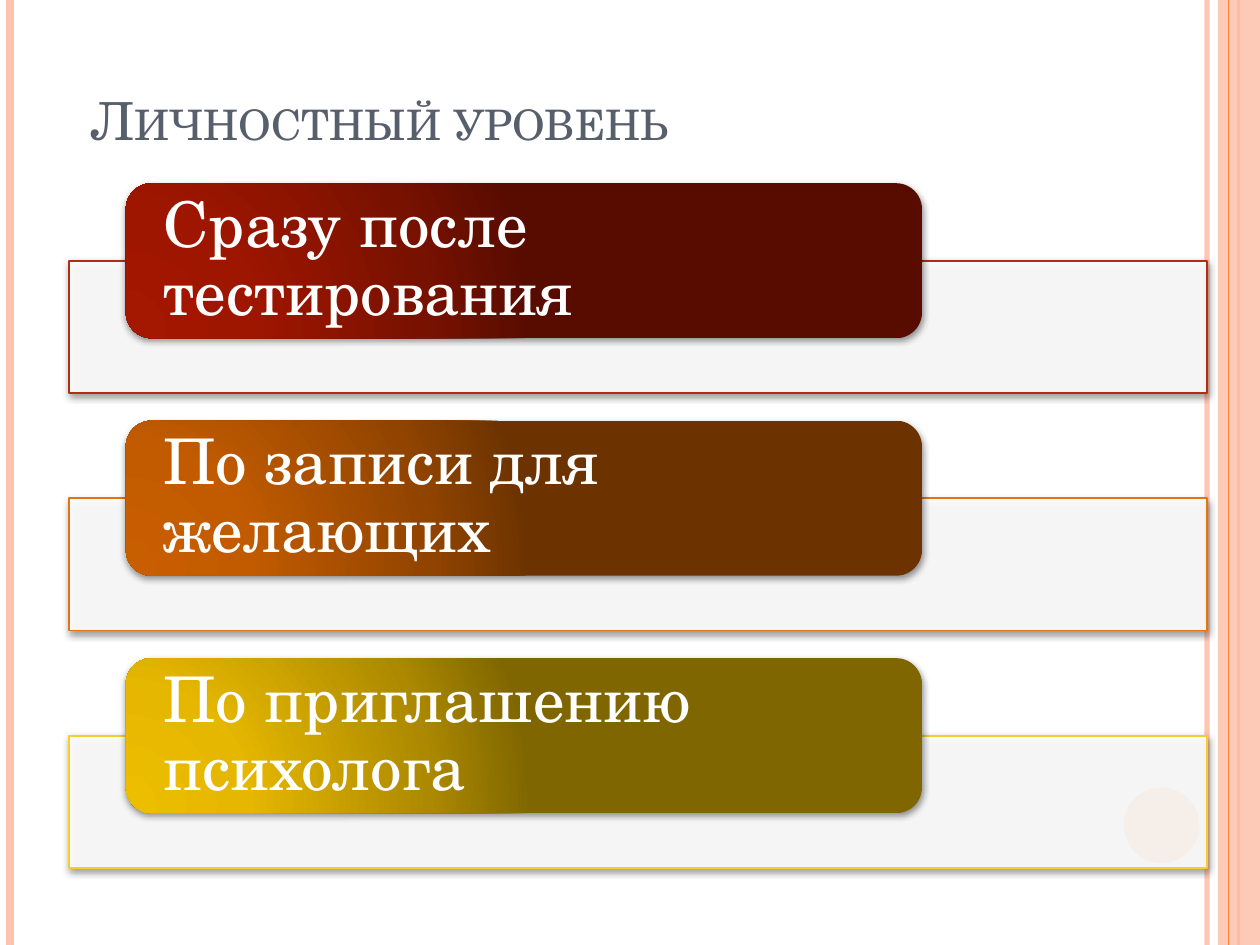
from pptx import Presentation
from pptx.dml.color import RGBColor as Rgb
from pptx.enum.shapes import MSO_CONNECTOR as Link, MSO_SHAPE as Kind
from pptx.enum.text import MSO_ANCHOR as Anchor, PP_ALIGN as Align
from pptx.oxml import parse_xml as to_xml
from pptx.oxml.ns import nsdecls, qn
from pptx.util import Pt

HUES = {"pale": "FEC3AE", "edge": "FE8637", "title": "575F6D", "white": "FFFFFF", "shade": "000000"}
FONT = "TeX Gyre Schola"
WIDE, HIGH = 720, 540
STEP = 135.7
BARS = [(9.58, "pale", 3, 93), (0.08, "pale", 4.5, 100), (9.83, "edge", 1.5, 100)]
ROWS = [
    ("Сразу после тестирования", "B32C16", ("A41700", "9F1600", "771100", "580C00")),
    ("По записи для желающих", "E27513", ("C95E00", "C25B00", "914400", "6C3300")),
    ("По приглашению психолога", "F5CD2D", ("EDBE00", "E5B700", "AC8900", "7F6600")),
]


def node(body):
    tag, _, rest = body.partition(" ")
    return to_xml(f"{tag} {nsdecls('a')} {rest}")


def write(frame, text, size, hue, anchor, inset=(7.2, 3.6), gap=1.0, small=False):
    frame.word_wrap = True
    frame.vertical_anchor = anchor
    frame.margin_left = frame.margin_right = Pt(inset[0])
    frame.margin_top = frame.margin_bottom = Pt(inset[1])
    para = frame.paragraphs[0]
    para.alignment = Align.LEFT
    para.line_spacing = gap
    run = para.add_run()
    run.text = text
    run.font.name, run.font.size = FONT, Pt(size)
    run.font.color.rgb = Rgb.from_string(hue)
    if small:
        run.font._element.set("cap", "small")


class Page:
    """Draw styled elements on one slide."""

    def __init__(self, deck):
        self.slide = deck.slides.add_slide(deck.slide_layouts[6])

    def fade(self, item, alpha):
        if alpha < 100:
            color = next(item._element.spPr.iter(qn("a:srgbClr")))
            color.append(node(f'<a:alpha val="{alpha * 1000}"/>'))

    def bar(self, x, hue, width, alpha=100):
        line = self.slide.shapes.add_connector(Link.STRAIGHT, Pt(x), 0, Pt(x), Pt(HIGH))
        line.line.color.rgb = Rgb.from_string(hue)
        line.line.width = Pt(width)
        self.fade(line, alpha)
        line._element.spPr.append(node("<a:effectLst />"))

    def shape(self, kind, box, hue=None, alpha=100, edge=None):
        item = self.slide.shapes.add_shape(kind, *map(Pt, box))
        item.shadow.inherit = False
        if hue:
            item.fill.solid()
            item.fill.fore_color.rgb = Rgb.from_string(hue)
            self.fade(item, alpha)
        if edge:
            item.line.color.rgb = Rgb.from_string(edge)
            item.line.width = Pt(1)
        else:
            item.line.fill.background()
        return item

    def lift(self, item):
        item._element.spPr.find(qn("a:effectLst")).append(node(
            f'<a:outerShdw blurRad="{Pt(4)}" dist="{Pt(1.6)}" dir="5400000" rotWithShape="0">'
            f'<a:srgbClr val="{HUES["shade"]}"><a:alpha val="42000"/></a:srgbClr></a:outerShdw>'))

    def panel(self, box, edge):
        self.lift(self.shape(Kind.RECTANGLE, box, HUES["white"], 90, edge))

    def label(self, box, text, tones):
        item = self.shape(Kind.ROUNDED_RECTANGLE, box)
        stops = "".join(f'<a:gs pos="{at * 1000}"><a:srgbClr val="{tone}"/></a:gs>'
                        for at, tone in zip((0, 30, 75, 100), tones))
        item._element.spPr.find(qn("a:prstGeom")).addnext(node(
            f'<a:gradFill rotWithShape="1"><a:gsLst>{stops}</a:gsLst><a:path path="circle">'
            '<a:fillToRect l="5000" t="100000" r="120000" b="10000"/></a:path></a:gradFill>'))
        self.lift(item)
        write(item.text_frame, text, 36, HUES["white"], Anchor.MIDDLE, inset=(17.2, 0), gap=0.9)

    def title(self, box, text):
        frame = self.slide.shapes.add_textbox(*map(Pt, box)).text_frame
        write(frame, text, 30, HUES["title"], Anchor.BOTTOM, small=True)


def main():
    deck = Presentation()
    deck.slide_width, deck.slide_height = Pt(WIDE), Pt(HIGH)
    page = Page(deck)
    for x, hue, width, alpha in BARS:
        page.bar(x * 72, HUES[hue], width, alpha)
    page.shape(Kind.RECTANGLE, (696, 0, 24, HIGH), HUES["pale"], 87)
    page.bar(702, HUES["edge"], 0.75)
    page.shape(Kind.OVAL, (642.2, 450, 43.2, 43.2), HUES["edge"])
    page.title((45, 0, 648, 90), "Личностный уровень")
    for i, (text, edge, tones) in enumerate(ROWS):
        page.panel((39.4, 149 + i * STEP, 650.4, 75.6), edge)
        page.label((71.9, 104.7 + i * STEP, 455, 88.6), text, tones)
    deck.save("out.pptx")


if __name__ == "__main__":
    main()
